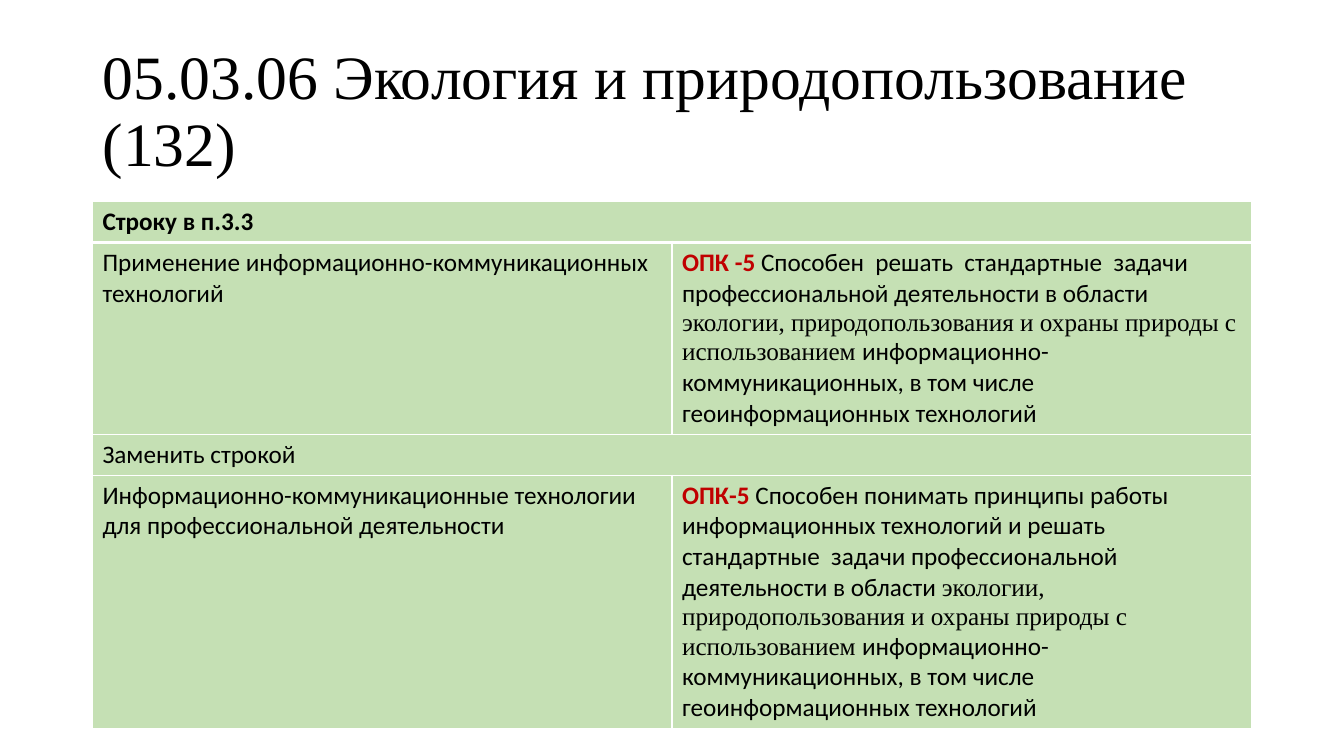
from dataclasses import dataclass

from lxml import etree
from pptx import Presentation
from pptx.dml.color import RGBColor
from pptx.enum.text import MSO_ANCHOR, MSO_AUTO_SIZE, PP_ALIGN
from pptx.oxml.ns import qn
from pptx.table import Table, _Cell
from pptx.text.text import Font
from pptx.util import Cm, Pt

LEFT = PP_ALIGN.LEFT
MIDDLE = MSO_ANCHOR.MIDDLE
NO_FIT = MSO_AUTO_SIZE.NONE
BLACK = RGBColor(0x00, 0x00, 0x00)
WHITE = RGBColor(0xFF, 0xFF, 0xFF)
GREEN = RGBColor(0xC5, 0xE0, 0xB4)
RED = RGBColor(0xC0, 0x00, 0x00)
SANS = "Calibri"
SERIF = "Times New Roman"
SIDE = Cm(2.33)
WIDTH = Cm(29.21)


@dataclass(frozen=True)
class Part:
    text: str
    face: str = SANS
    color: RGBColor = BLACK
    bold: bool = False


@dataclass(frozen=True)
class Entry:
    row: int
    col: int
    lines: tuple[tuple[Part, ...], ...]
    wide: bool = False


FIELD = Part("экологии, природопользования и охраны природы с использованием ", SERIF)
TOOLS = Part("информационно-коммуникационных, в том числе геоинформационных технологий")

ENTRIES = (
    Entry(0, 0, ((Part("Строку в п.3.3", bold=True),),), wide=True),
    Entry(1, 0, (
        (Part("Применение информационно-коммуникационных"),),
        (Part("технологий"),),
    )),
    Entry(1, 1, ((
        Part("ОПК -5 ", color=RED, bold=True),
        Part("Способен  решать  стандартные  задачи профессиональной деятельности в области "),
        FIELD,
        TOOLS,
    ),)),
    Entry(2, 0, ((Part("Заменить строкой"),),), wide=True),
    Entry(3, 0, ((Part("Информационно-коммуникационные технологии для профессиональной деятельности"),),)),
    Entry(3, 1, ((
        Part("ОПК-5", color=RED, bold=True),
        Part(" Способен понимать принципы работы  информационных технологий и решать "
             "стандартные  задачи профессиональной деятельности в области "),
        FIELD,
        TOOLS,
    ),)),
)


def style(font: Font, part: Part, size: int) -> None:
    font.name = part.face
    font.size = Pt(size)
    font.bold = part.bold
    font.color.rgb = part.color


def edge(cell: _Cell, base: float) -> None:
    props = cell._tc.get_or_add_tcPr()
    widths = {"a:lnL": 1, "a:lnR": 1, "a:lnT": 1, "a:lnB": base}
    for spot, (tag, width) in enumerate(widths.items()):
        line = etree.Element(qn(tag), w=str(Pt(width)))
        fill = etree.SubElement(line, qn("a:solidFill"))
        etree.SubElement(fill, qn("a:srgbClr"), val=str(WHITE))
        props.insert(spot, line)


def write(table: Table, entry: Entry) -> None:
    cell = table.cell(entry.row, entry.col)
    if entry.wide:
        cell.merge(table.cell(entry.row, 1))
    frame = cell.text_frame
    for index, line in enumerate(entry.lines):
        para = frame.add_paragraph() if index else frame.paragraphs[0]
        for part in line:
            run = para.add_run()
            run.text = part.text
            if len(line) > 1:
                style(run.font, part, 18)
        if len(line) == 1:
            style(para.font, line[0], 18)


def main() -> None:
    deck = Presentation()
    deck.slide_width = Cm(33.87)
    deck.slide_height = Cm(19.05)
    slide = deck.slides.add_slide(deck.slide_layouts[5])

    title = slide.shapes.title
    title.left, title.top, title.width, title.height = SIDE, Cm(1.01), WIDTH, Cm(3.68)
    frame = title.text_frame
    frame.text = "05.03.06 Экология и природопользование (132)"
    frame.auto_size = NO_FIT
    frame.vertical_anchor = MIDDLE
    para = frame.paragraphs[0]
    para.alignment = LEFT
    para.line_spacing = 0.9
    style(para.font, Part("", SERIF), 44)

    table = slide.shapes.add_table(4, 2, SIDE, Cm(5.08), WIDTH, Cm(4.12)).table
    table.first_row = False
    table.horz_banding = False
    for entry in ENTRIES:
        write(table, entry)
    for index, row in enumerate(table.rows):
        for cell in row.cells:
            cell.fill.solid()
            cell.fill.fore_color.rgb = GREEN
            edge(cell, 1 if index else 3)

    deck.save("out.pptx")


if __name__ == "__main__":
    main()
